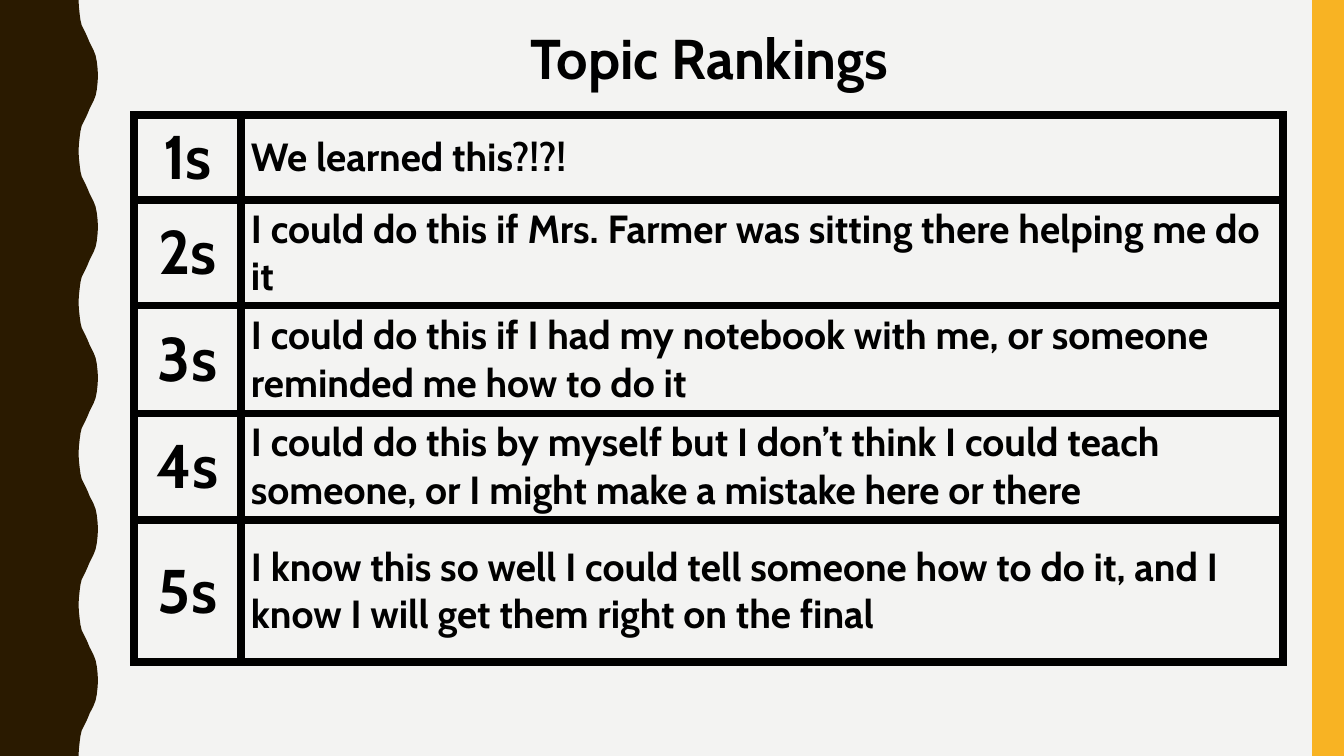
from dataclasses import dataclass

from lxml import etree
from pptx import Presentation
from pptx.dml import color
from pptx.enum import shapes, text
from pptx.oxml import ns
from pptx.util import Cm, Pt

COLORS = {"page": "F3F3F2", "wave": "2A1A00", "bar": "F8B323", "ink": "000000"}
FONT = "Cabin"
WIDTH, HEIGHT = 33.87, 19.05
CRESTS = 5
# Rising half of one crest, as (x, y) in cm
RISE = [(1.98, 0), (1.99, 0.18), (2.01, 0.36), (2.03, 0.51), (2.06, 0.64),
        (2.11, 0.74), (2.16, 0.84), (2.21, 0.95), (2.26, 1.07), (2.31, 1.17),
        (2.36, 1.27), (2.41, 1.4), (2.44, 1.55), (2.46, 1.73), (2.47, 1.9)]


@dataclass
class Ranking:
    label: str
    meaning: str
    height: float


RANKINGS = [
    Ranking("1s", "We learned this?!?!", 2.06),
    Ranking("2s", "I could do this if Mrs. Farmer was sitting there helping me do it", 2.46),
    Ranking("3s", "I could do this if I had my notebook with me, or someone "
                  "reminded me how to do it", 2.72),
    Ranking("4s", "I could do this by myself but I don’t think I could teach "
                  "someone, or I might make a mistake here or there", 2.69),
    Ranking("5s", "I know this so well I could tell someone how to do it, and I "
                  "know I will get them right on the final", 3.58),
]


def rgb(name: str) -> color.RGBColor:
    return color.RGBColor.from_string(COLORS[name])


def write(frame, words: str, *, size: float, align=text.PP_ALIGN.LEFT) -> None:
    frame.word_wrap = True
    para = frame.paragraphs[0]
    para.alignment = align
    span = para.add_run()
    span.text = words
    span.font.name = FONT
    span.font.size = Pt(size)
    span.font.bold = True
    span.font.color.rgb = rgb("ink")


def paint(shape, name: str) -> None:
    shape.shadow.inherit = False
    shape.fill.solid()
    shape.fill.fore_color.rgb = rgb(name)
    shape.line.fill.background()


def add_wave(page) -> None:
    period = HEIGHT / CRESTS
    crest = RISE + [(x, period - y) for x, y in reversed(RISE)]
    edge = [(x, y + period * i) for i in range(CRESTS) for x, y in crest]
    points = [(Cm(x), Cm(y)) for x, y in edge + [(0, HEIGHT)]]
    builder = page.shapes.build_freeform(0, 0)
    builder.add_line_segments(points, close=True)
    paint(builder.convert_to_shape(), "wave")


def add_borders(cell, points: float) -> None:
    properties = cell._tc.get_or_add_tcPr()
    for side in ("lnL", "lnR", "lnT", "lnB"):
        line = etree.SubElement(properties, ns.qn(f"a:{side}"), w=str(Pt(points)))
        fill = etree.SubElement(line, ns.qn("a:solidFill"))
        etree.SubElement(fill, ns.qn("a:srgbClr"), val=COLORS["ink"])


def add_rankings(page) -> None:
    widths = (2.69, 26.26)
    height = sum(ranking.height for ranking in RANKINGS)
    table = page.shapes.add_table(len(RANKINGS), len(widths), Cm(3.38), Cm(2.9),
                                  Cm(sum(widths)), Cm(height)).table
    table.first_row = table.horz_banding = False
    for column, width in zip(table.columns, widths):
        column.width = Cm(width)
    for row, ranking in zip(table.rows, RANKINGS):
        row.height = Cm(ranking.height)
        label, meaning = row.cells
        write(label.text_frame, ranking.label, size=44, align=text.PP_ALIGN.CENTER)
        write(meaning.text_frame, ranking.meaning, size=28)
        for cell in (label, meaning):
            cell.vertical_anchor = text.MSO_ANCHOR.MIDDLE
            add_borders(cell, 6)
            cell.fill.background()


def main() -> None:
    deck = Presentation()
    deck.slide_width, deck.slide_height = Cm(WIDTH), Cm(HEIGHT)
    page = deck.slides.add_slide(deck.slide_layouts[6])
    page.background.fill.solid()
    page.background.fill.fore_color.rgb = rgb("page")

    # Side decoration
    add_wave(page)
    bar = page.shapes.add_shape(shapes.MSO_SHAPE.RECTANGLE, Cm(33.07), 0,
                                Cm(0.8), Cm(HEIGHT))
    paint(bar, "bar")

    # Rankings and title
    add_rankings(page)
    box = page.shapes.add_textbox(Cm(4.93), Cm(0.48), Cm(25.88), Cm(1.96))
    write(box.text_frame, "Topic Rankings", size=40, align=text.PP_ALIGN.CENTER)

    deck.save("out.pptx")


if __name__ == "__main__":
    main()
